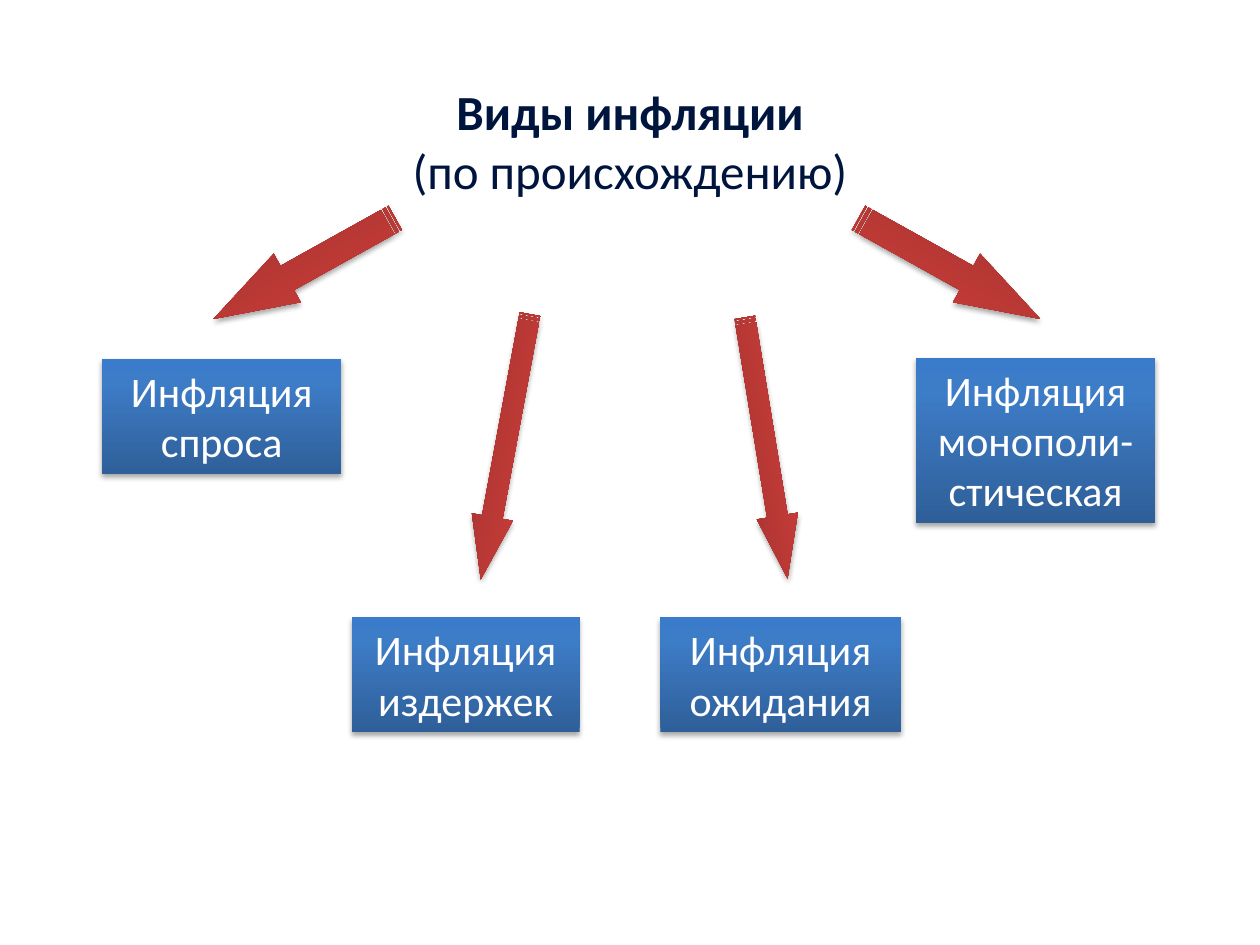
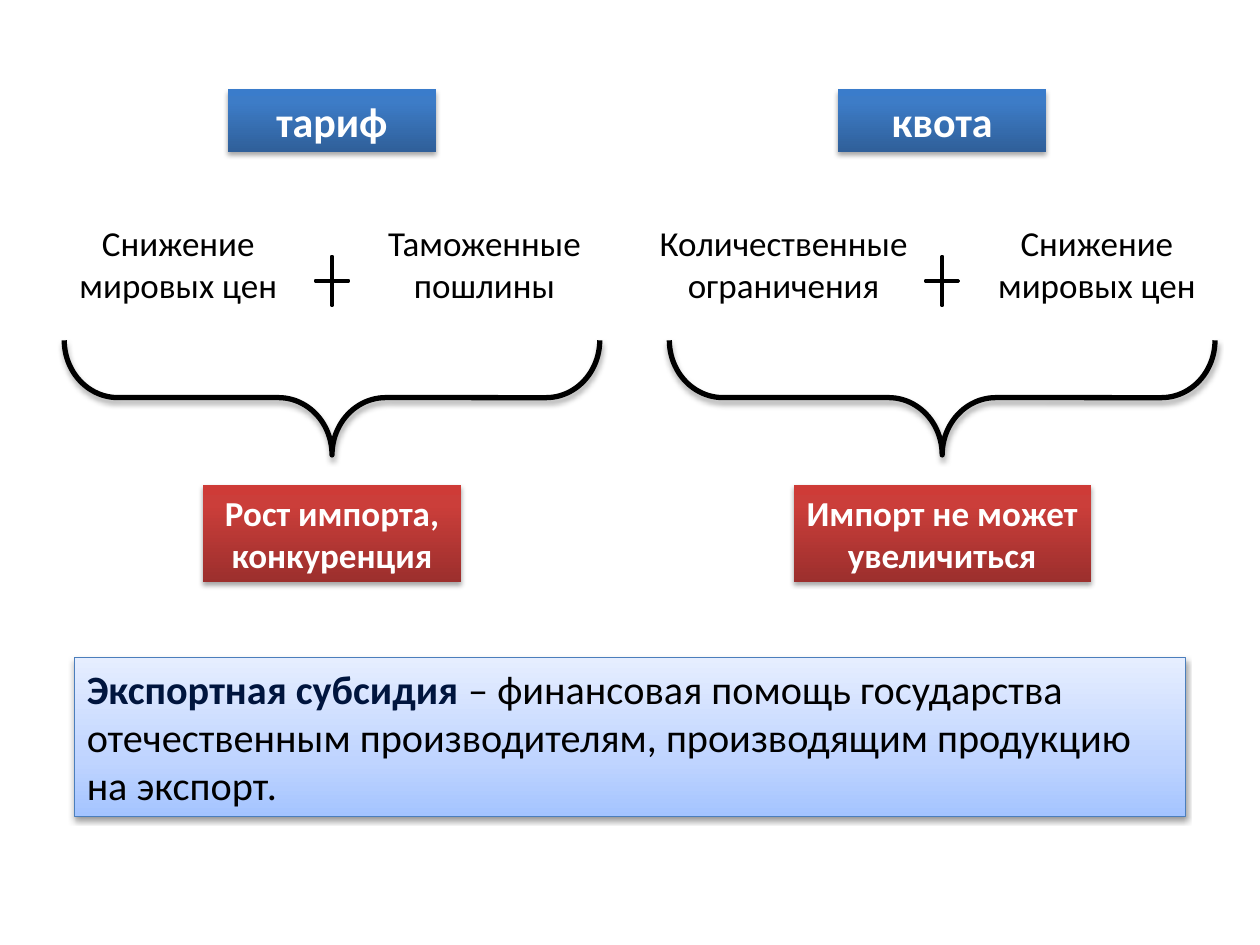
"""Build two slides on kinds of inflation and on trade barriers."""
from copy import deepcopy

from pptx import Presentation
from pptx.dml.color import RGBColor
from pptx.enum.shapes import MSO_SHAPE
from pptx.enum.text import MSO_ANCHOR, MSO_AUTO_SIZE, PP_ALIGN
from pptx.oxml import parse_xml
from pptx.oxml.ns import nsdecls
from pptx.util import Pt

FONT = "Calibri"
NAVY = RGBColor(0x00, 0x15, 0x3E)
BLACK = RGBColor(0, 0, 0)
WHITE = RGBColor(0xFF, 0xFF, 0xFF)
EDGE = RGBColor(0x4B, 0x7E, 0xBC)
BLUE = [(0, RGBColor(0x2F, 0x5F, 0x99)), (0.8, RGBColor(0x3D, 0x7C, 0xC7)),
        (1, RGBColor(0x3A, 0x7C, 0xCB))]
RED = [(0, RGBColor(0x9C, 0x2F, 0x2D)), (0.8, RGBColor(0xCB, 0x3E, 0x3A)),
       (1, RGBColor(0xCE, 0x3B, 0x37))]
PALE = [(0, RGBColor(0xA4, 0xC4, 0xFF)), (0.35, RGBColor(0xBF, 0xD4, 0xFF)),
        (1, RGBColor(0xE6, 0xEE, 0xFF))]

TITLE = ["Виды инфляции", "(по происхождению)"]
KINDS = [
    ("Инфляция спроса", (58.3, 205.2, 136.8, 65.5)),
    ("Инфляция издержек", (200.9, 352.8, 130.3, 65.5)),
    ("Инфляция ожидания", (377.3, 352.8, 137.5, 65.5)),
    ("Инфляция монополи-стическая", (523.4, 204.5, 136.8, 94.3)),
]
ARROWS = [
    ((114.5, 137.5, 118.8, 31.7), 150.9, False),
    ((211.7, 243.4, 154.1, 23.8), 100.5, False),
    ((362.2, 244.1, 151.2, 23.8), 80.7, False),
    ((483.1, 137.5, 118.8, 31.7), 209.1, True),
]
BARRIERS = [
    dict(head="тариф", center=189.7, brace=306, result="Рост импорта, конкуренция",
         result_width=147.6,
         causes=[("Снижение мировых цен", 101.9, 130.3), ("Таможенные пошлины", 276.8, 130.3)]),
    dict(head="квота", center=538.4, brace=311.8, result="Импорт не может увеличиться",
         result_width=169.9,
         causes=[("Количественные ограничения", 447.8, 164.2), ("Снижение мировых цен", 626.8, 130.3)]),
]
SUBSIDY = [("Экспортная субсидия ", NAVY, True),
           ("– финансовая помощь государства отечественным производителям, "
            "производящим продукцию на экспорт.", BLACK, False)]


def centered(center, top, width, height):
    return center - width / 2, top, width, height


def add_shadow(sp, alpha=35, dist=1.8):
    sp.shadow.inherit = False
    sp._element.spPr.find("{*}effectLst").append(parse_xml(
        f'<a:outerShdw {nsdecls("a")} blurRad="{Pt(3.1)}" dist="{Pt(dist)}" dir="5400000" '
        f'rotWithShape="0"><a:srgbClr val="000000"><a:alpha val="{alpha * 1000}"/>'
        '</a:srgbClr></a:outerShdw>'))


def add_gradient(sp, stops):
    sp.fill.gradient()
    sp.fill.gradient_angle = 90
    gs_list = sp._element.spPr.find("{*}gradFill/{*}gsLst")
    gs_list.append(deepcopy(gs_list[0]))
    for stop, (pos, color) in zip(sp.fill.gradient_stops, stops):
        stop.color.rgb = color
        stop.position = pos


def add_shape(s, kind, box, fill=None, line=None, width=0.75, adj=(), rot=0):
    sp = s.shapes.add_shape(kind, *map(Pt, box))
    sp.shadow.inherit = False
    sp.rotation = rot
    for i, value in enumerate(adj):
        sp.adjustments[i] = value
    if fill is None:
        sp.fill.background()
    elif isinstance(fill, list):
        add_gradient(sp, fill)
    else:
        sp.fill.solid()
        sp.fill.fore_color.rgb = fill
    if line is None:
        sp.line.fill.background()
    else:
        sp.line.color.rgb = line
        sp.line.width = Pt(width)
    return sp


def write(sp, paragraphs, size, align=PP_ALIGN.CENTER):
    tf = sp.text_frame
    tf.word_wrap = True
    tf.auto_size = MSO_AUTO_SIZE.SHAPE_TO_FIT_TEXT
    tf.vertical_anchor = MSO_ANCHOR.TOP
    for i, runs in enumerate(paragraphs):
        p = tf.add_paragraph() if i else tf.paragraphs[0]
        p.alignment = align
        for text, color, bold in runs:
            r = p.add_run()
            r.text = text
            r.font.name, r.font.size, r.font.bold = FONT, Pt(size), bold
            r.font.color.rgb = color


def add_text(s, text, box, size=20, color=BLACK, bold=False):
    write(s.shapes.add_textbox(*map(Pt, box)), [[(text, color, bold)]], size)


def add_box(s, text, box, fill=BLUE, size=24, bold=False):
    sp = add_shape(s, MSO_SHAPE.RECTANGLE, box, fill)
    add_shadow(sp)
    write(sp, [[(text, WHITE, bold)]], size)


def build_kinds(s):
    title = s.shapes.add_textbox(*map(Pt, (133.2, 43.2, 453.6, 74.9)))
    write(title, [[(text, NAVY, i == 0)] for i, text in enumerate(TITLE)], 28)
    for (text, box), (place, rot, flip) in zip(KINDS, ARROWS):
        arrow = add_shape(s, MSO_SHAPE.STRIPED_RIGHT_ARROW, place, RED, adj=(0.5, 1.52), rot=rot)
        if flip:
            arrow._element.spPr.xfrm.set("flipH", "1")
        add_shadow(arrow)
        add_box(s, text, box)


def build_barriers(s):
    for b in BARRIERS:
        mid = b["center"]
        add_box(s, b["head"], centered(mid, 51.1, 118.8, 36), bold=True)
        for text, center, width in b["causes"]:
            add_text(s, text, centered(center, 123.1, width, 55.4))
        add_shape(s, MSO_SHAPE.MATH_PLUS, centered(mid, 141.8, 25.2, 37.4),
                  WHITE, BLACK, 2, adj=(0.024,))
        brace = add_shape(s, MSO_SHAPE.RIGHT_BRACE,
                          centered(mid, 227.2 - b["brace"] / 2, 65.5, b["brace"]),
                          line=BLACK, width=3, adj=(0.468, 0.5), rot=90)
        add_shadow(brace)
        add_box(s, b["result"], centered(mid, 277.2, b["result_width"], 55.4),
                RED, size=20, bold=True)
    note = add_shape(s, MSO_SHAPE.RECTANGLE, (42.5, 375.8, 635, 90.7), PALE, EDGE)
    add_shadow(note, alpha=38, dist=1.6)
    write(note, [SUBSIDY], 23, PP_ALIGN.LEFT)


def main():
    prs = Presentation()
    prs.slide_width, prs.slide_height = Pt(720), Pt(540)
    for build in (build_kinds, build_barriers):
        build(prs.slides.add_slide(prs.slide_layouts[6]))
    prs.save("out.pptx")


if __name__ == "__main__":
    main()
